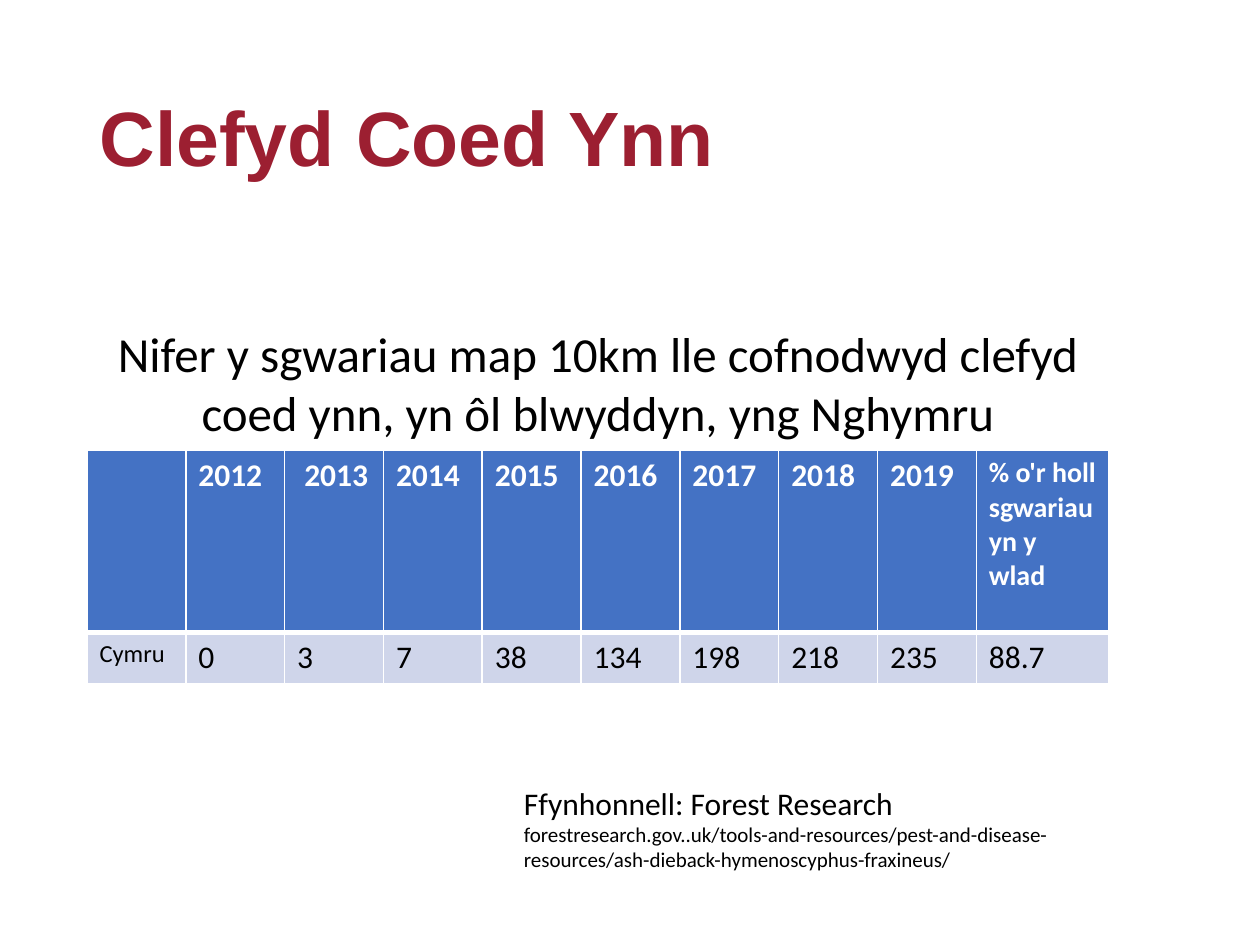
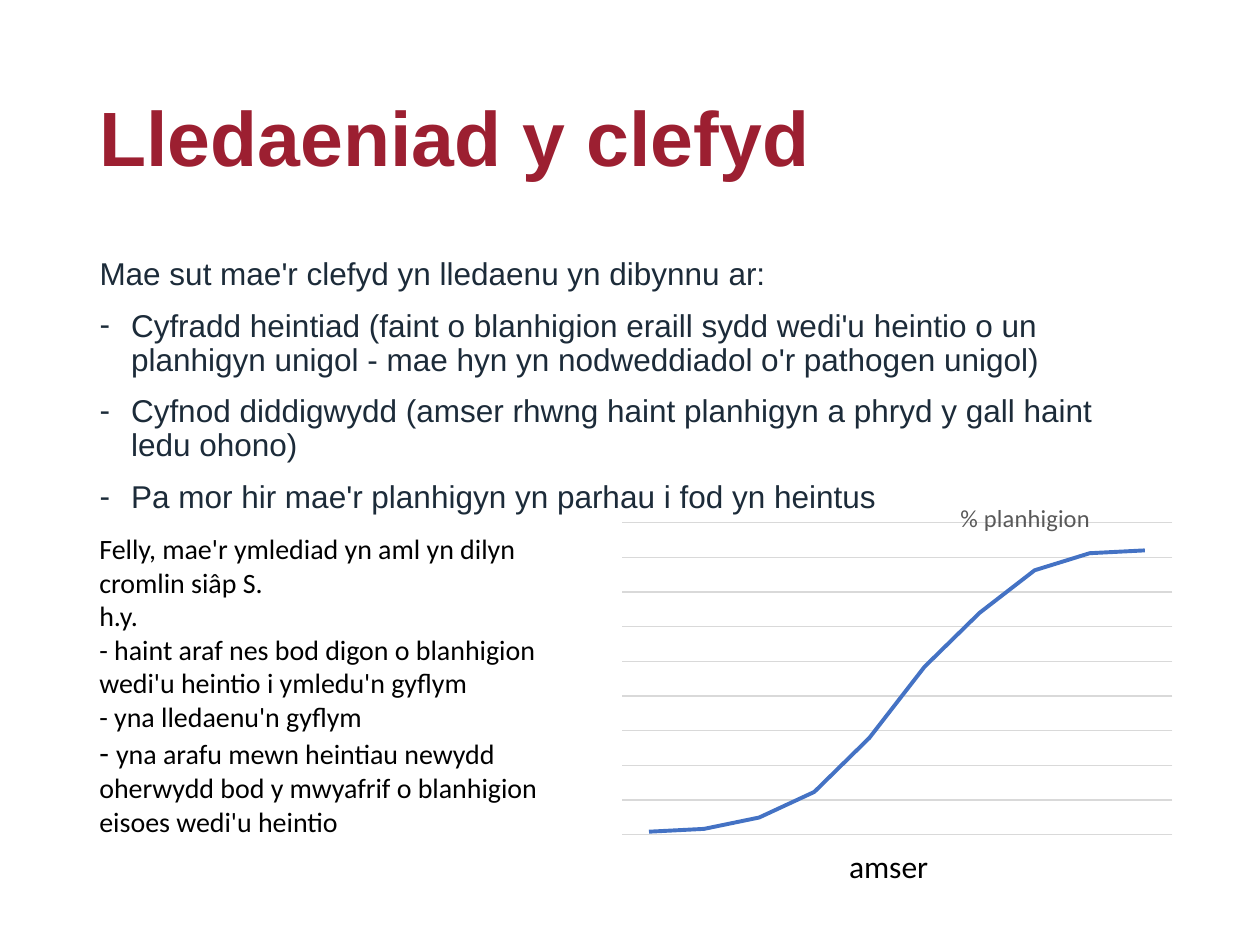
from lxml import etree
from pptx import Presentation
from pptx.chart.data import CategoryChartData
from pptx.dml.color import RGBColor
from pptx.enum.chart import XL_CHART_TYPE
from pptx.enum.text import MSO_ANCHOR, MSO_AUTO_SIZE, PP_ALIGN
from pptx.oxml import parse_xml
from pptx.oxml.ns import nsdecls, qn
from pptx.util import Inches, Pt

LINE = XL_CHART_TYPE.LINE
MIDDLE = MSO_ANCHOR.MIDDLE
FIXED = MSO_AUTO_SIZE.NONE
LEFT, CENTRE = PP_ALIGN.LEFT, PP_ALIGN.CENTER

RED, NAVY, BLUE, PALE = "9C1F31", "1C2B39", "4472C4", "CFD5EA"
BLACK, WHITE, GREY, GRID = "000000", "FFFFFF", "595959", "D9D9D9"
HEAD, BODY = "Arial", "Calibri"
EDGE = 0.69

YEARS = ["", "2012", " 2013", "2014", "2015", "2016", "2017", "2018", "2019",
         "% o'r holl sgwariau yn y wlad"]
COUNTS = ["Cymru", "0", "3", "7", "38", "134", "198", "218", "235", "88.7"]
SPREAD = [1, 2, 6, 15, 34, 59, 78, 93, 99, 100]
FACTORS = [
    "Mae sut mae'r clefyd yn lledaenu yn dibynnu ar:",
    "Cyfradd heintiad (faint o blanhigion eraill sydd wedi'u heintio o un "
    "planhigyn unigol - mae hyn yn nodweddiadol o'r pathogen unigol)",
    "Cyfnod diddigwydd (amser rhwng haint planhigyn a phryd y gall haint ledu ohono)",
    "Pa mor hir mae'r planhigyn yn parhau i fod yn heintus",
]
PHASES = [
    "Felly, mae'r ymlediad yn aml yn dilyn cromlin siâp S.",
    "h.y.",
    "- haint araf nes bod digon o blanhigion wedi'u heintio i ymledu'n gyflym",
    "- yna lledaenu'n gyflym",
]
LAST = "yna arafu mewn heintiau newydd oherwydd bod y mwyafrif o blanhigion eisoes wedi'u heintio"


def rgb(code):
    """Turn a hex string into a colour."""
    return RGBColor.from_string(code)


def style(font, size, code=BLACK, face=BODY, bold=False):
    """Set the look of a font."""
    font.size, font.name, font.bold = Pt(size), face, bold
    font.color.rgb = rgb(code)


def place(shape, box):
    """Move a shape to a box in inches."""
    shape.left, shape.top, shape.width, shape.height = map(Inches, box)


def start(deck, layout, text):
    """Add a slide with the shared title."""
    slide = deck.slides.add_slide(deck.slide_layouts[layout])
    title = slide.shapes.title
    place(title, (EDGE, 0.4, 6.23, 1.45))
    frame = title.text_frame
    frame.text = text
    frame.auto_size, frame.vertical_anchor = FIXED, MIDDLE
    para = frame.paragraphs[0]
    para.alignment, para.line_spacing = LEFT, 0.9
    style(para.font, 44, RED, HEAD, True)
    return slide


def write(slide, box, lines, align=LEFT):
    """Add a text box of (text, size) lines."""
    frame = slide.shapes.add_textbox(*map(Inches, box)).text_frame
    frame.word_wrap = True
    for i, (text, size) in enumerate(lines):
        para = frame.add_paragraph() if i else frame.paragraphs[0]
        para.text, para.alignment = text, align
        style(para.font, size)
    return frame


def border(cell, side, width):
    """Draw one white cell edge."""
    cell._tc.get_or_add_tcPr().append(parse_xml(
        f'<a:{side} {nsdecls("a")} w="{Pt(width)}"><a:solidFill>'
        f'<a:srgbClr val="{WHITE}"/></a:solidFill></a:{side}>'))


def fill(cell, text, size, head):
    """Fill and format one table cell."""
    for side in ("lnL", "lnR", "lnT", "lnB"):
        thick = side == ("lnB" if head else "lnT")
        border(cell, side, 3 if thick else 1)
    cell.fill.solid()
    cell.fill.fore_color.rgb = rgb(BLUE if head else PALE)
    cell.text = text
    style(cell.text_frame.paragraphs[0].font, size, WHITE if head else BLACK, bold=head)


def counts(slide, box):
    """Add the table of map squares by year."""
    table = slide.shapes.add_table(2, len(YEARS), *map(Inches, box)).table
    table.horz_banding = False
    wide = 1.05
    for col in table.columns:
        col.width = Inches((box[2] - wide) / (len(YEARS) - 1))
    table.columns[len(YEARS) - 1].width = Inches(wide)
    for row, high in zip(table.rows, (1.45, 0.4)):
        row.height = Inches(high)
    for i, (year, count) in enumerate(zip(YEARS, COUNTS)):
        fill(table.cell(0, i), year, 16 if i == len(YEARS) - 1 else 18, True)
        fill(table.cell(1, i), count, 18 if i else 14, False)


def factors(slide, box):
    """Fill the body with an opening line and dashed points."""
    body = slide.placeholders[1]
    place(body, box)
    frame = body.text_frame
    frame.text = "\n".join(FACTORS)
    frame.auto_size = FIXED
    for i, para in enumerate(frame.paragraphs):
        props = para._p.get_or_add_pPr()
        dent = Inches(0.25) if i else 0
        props.set("marL", str(dent))
        props.set("indent", str(-dent))
        mark = etree.SubElement(props, qn("a:buChar" if i else "a:buNone"))
        if i:
            mark.set("char", "-")
        para.line_spacing, para.space_before = 0.9, Pt(10 if i else 0)
        style(para.font, 18, NAVY, HEAD)


def layout(parent, index, **values):
    """Fix a chart part at fractions of the chart."""
    inner = '<c:layoutTarget val="inner"/>' if "w" in values else ""
    modes = "".join(f'<c:{k}Mode val="edge"/>' for k in "xy")
    sizes = "".join(f'<c:{k} val="{v}"/>' for k, v in values.items())
    for old in parent.findall(qn("c:layout")):
        parent.remove(old)
    parent.insert(index, parse_xml(
        f'<c:layout {nsdecls("c")}><c:manualLayout>{inner}{modes}{sizes}'
        '</c:manualLayout></c:layout>'))


def curve(slide, box):
    """Add the S-shaped line chart."""
    data = CategoryChartData()
    data.categories = [str(n + 1) for n in range(len(SPREAD))]
    data.add_series("Series 1", SPREAD)
    chart = slide.shapes.add_chart(LINE, *map(Inches, box), data).chart
    style(chart.font, 10)
    chart.has_legend = False
    frame = chart.chart_title.text_frame
    frame.text = "% planhigion"
    style(frame.paragraphs[0].font, 14, GREY)
    chart.chart_title.include_in_layout = True
    layout(chart.chart_title._element, 1, x=0.67, y=0.14)
    layout(chart._chartSpace.chart.plotArea, 0, x=0.16, y=0.2, w=0.84, h=0.72)
    chart.category_axis.visible = False
    axis = chart.value_axis
    axis.visible = False
    axis.minimum_scale, axis.maximum_scale, axis.major_unit = 0, 109.8, 12.2
    axis.has_major_gridlines = True
    grid = axis.major_gridlines.format.line
    grid.color.rgb, grid.width = rgb(GRID), Pt(0.75)
    chart.plots[0].vary_by_categories = False
    line = chart.plots[0].series[0]
    line.smooth = False
    line.format.line.color.rgb, line.format.line.width = rgb(BLUE), Pt(2.25)


def phases(slide, box):
    """Describe the phases of the spread."""
    frame = write(slide, box, [(text, 16) for text in PHASES])
    para = frame.add_paragraph()
    for text, size in (("- ", 18), (LAST, 16)):
        run = para.add_run()
        run.text = text
        style(run.font, size)


def ash(deck):
    """Build the slide on recorded cases."""
    slide = start(deck, 5, "Clefyd Coed Ynn")
    counts(slide, (EDGE, 3.57, 8.11, 1.85))
    write(slide, (EDGE, 2.52, 8.11, 1.04), [(
        "Nifer y sgwariau map 10km lle cofnodwyd clefyd coed ynn, "
        "yn ôl blwyddyn, yng Nghymru", 28)], CENTRE)
    write(slide, (4.06, 6.17, 4.99, 0.81), [
        ("Ffynhonnell: Forest Research", 18),
        ("forestresearch.gov..uk/tools-and-resources/pest-and-disease-resources/"
         "ash-dieback-hymenoscyphus-fraxineus/", 12)])


def spread(deck):
    """Build the slide on how the disease spreads."""
    slide = start(deck, 1, "Lledaeniad y clefyd")
    factors(slide, (EDGE, 2, 8.62, 4.76))
    curve(slide, (4.1, 3.46, 5.21, 3.44))
    phases(slide, (EDGE, 4.17, 3.85, 2.66))
    write(slide, (6.64, 6.67, 0.94, 0.4), [("amser", 18)])


def main():
    """Build and save the deck."""
    deck = Presentation()
    deck.slide_width, deck.slide_height = Inches(10), Inches(7.5)
    ash(deck)
    spread(deck)
    deck.save("out.pptx")


if __name__ == "__main__":
    main()
